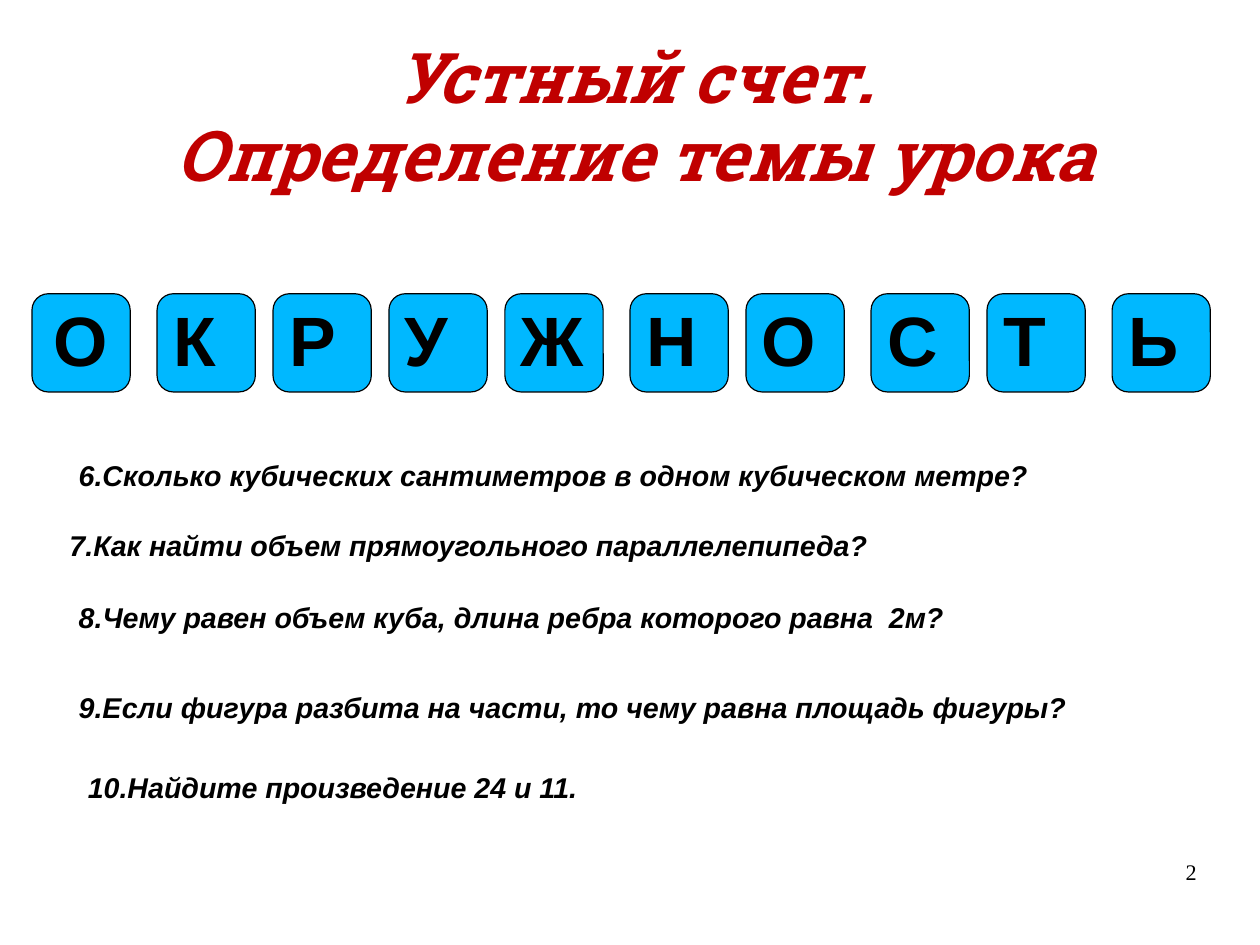
from pptx import Presentation
from pptx.dml.color import RGBColor
from pptx.enum import shapes, text
from pptx.util import Cm, Inches, Pt

# Content
HEADING = "Устный счет.\nОпределение темы урока"
LETTER_GROUPS = ["О", "КРУЖ", "НО", "СТ", "Ь"]
QUESTIONS = [  # left, top, width, wording
    (0.59, 3.98, 8.6, "6.Сколько кубических сантиметров в одном кубическом метре?"),
    (0.51, 4.6, 7.26, "7.Как найти объем прямоугольного параллелепипеда?"),
    (0.59, 5.23, 7.85, "8.Чему равен объем куба, длина ребра которого равна  2м?"),
    (0.59, 6.01, 8.93, "9.Если фигура разбита на части, то чему равна площадь фигуры?"),
    (0.67, 6.71, 4.53, "10.Найдите произведение 24 и 11."),
]
PAGE_NUMBER = "2"

RED = RGBColor(0xC0, 0x00, 0x00)
BLUE = RGBColor(0x00, 0xB8, 0xFF)
BLACK = RGBColor(0x00, 0x00, 0x00)

# Letter row, in inches: equal gaps, a little wider between groups
ROW_LEFT, ROW_TOP, ROW_WIDTH, TILE = 0.28, 2.57, 10.31, 0.86
GROUP_EXTRA = 0.08
LETTER_COUNT = len("".join(LETTER_GROUPS))
LETTER_GAP = (ROW_WIDTH - LETTER_COUNT * TILE
              - (len(LETTER_GROUPS) - 1) * GROUP_EXTRA) / (LETTER_COUNT - 1)


def write(frame, wording, size, font="Arial", color=BLACK, bold=True,
          italic=False, align=text.PP_ALIGN.LEFT, spacing=0.93):
    frame.text = wording
    for paragraph in frame.paragraphs:
        paragraph.alignment = align
        paragraph.line_spacing = spacing
        for run in paragraph.runs:
            run.font.name = font
            run.font.size = Pt(size)
            run.font.bold = bold
            run.font.italic = italic
            run.font.color.rgb = color


def add_tile(slide, letter, left, align):
    tile = slide.shapes.add_shape(
        shapes.MSO_SHAPE.ROUNDED_RECTANGLE,
        Inches(left), Inches(ROW_TOP), Inches(TILE), Inches(TILE))
    tile.shadow.inherit = False
    tile.fill.solid()
    tile.fill.fore_color.rgb = BLUE
    tile.line.color.rgb = BLACK
    tile.line.width = Pt(0.75)
    tile.text_frame.vertical_anchor = text.MSO_ANCHOR.MIDDLE
    write(tile.text_frame, letter, 44, align=align)


def main():
    prs = Presentation()
    prs.slide_width, prs.slide_height = Cm(28), Cm(21)
    slide = prs.slides.add_slide(prs.slide_layouts[5])

    # Heading
    title = slide.shapes.title
    title.left, title.top = Inches(0.75), Inches(0.31)
    title.width, title.height = Inches(9.61), Inches(1.61)
    title.text_frame.auto_size = text.MSO_AUTO_SIZE.NONE
    title.text_frame.vertical_anchor = text.MSO_ANCHOR.TOP
    write(title.text_frame, HEADING, 44, "Roboto Slab", RED, italic=True,
          align=text.PP_ALIGN.CENTER)

    # Letter tiles: only the first letter is centred
    left = ROW_LEFT
    align = text.PP_ALIGN.CENTER
    for group in LETTER_GROUPS:
        for letter in group:
            add_tile(slide, letter, left, align)
            left += TILE + LETTER_GAP
            align = text.PP_ALIGN.LEFT
        left += GROUP_EXTRA

    # Questions
    for left, top, width, wording in QUESTIONS:
        question = slide.shapes.add_textbox(
            Inches(left), Inches(top), Inches(width), Inches(0.38))
        question.text_frame.word_wrap = False
        question.text_frame.auto_size = text.MSO_AUTO_SIZE.SHAPE_TO_FIT_TEXT
        write(question.text_frame, wording, 18, italic=True)

    # Page number
    number = slide.shapes.add_textbox(
        Inches(7.9), Inches(7.53), Inches(2.57), Inches(0.57)).text_frame
    number.word_wrap = True
    number.margin_left = number.margin_right = 0
    number.margin_top = number.margin_bottom = 0
    write(number, PAGE_NUMBER, 14, "Times New Roman", bold=False,
          align=text.PP_ALIGN.RIGHT, spacing=0.95)

    prs.save("out.pptx")


if __name__ == "__main__":
    main()
